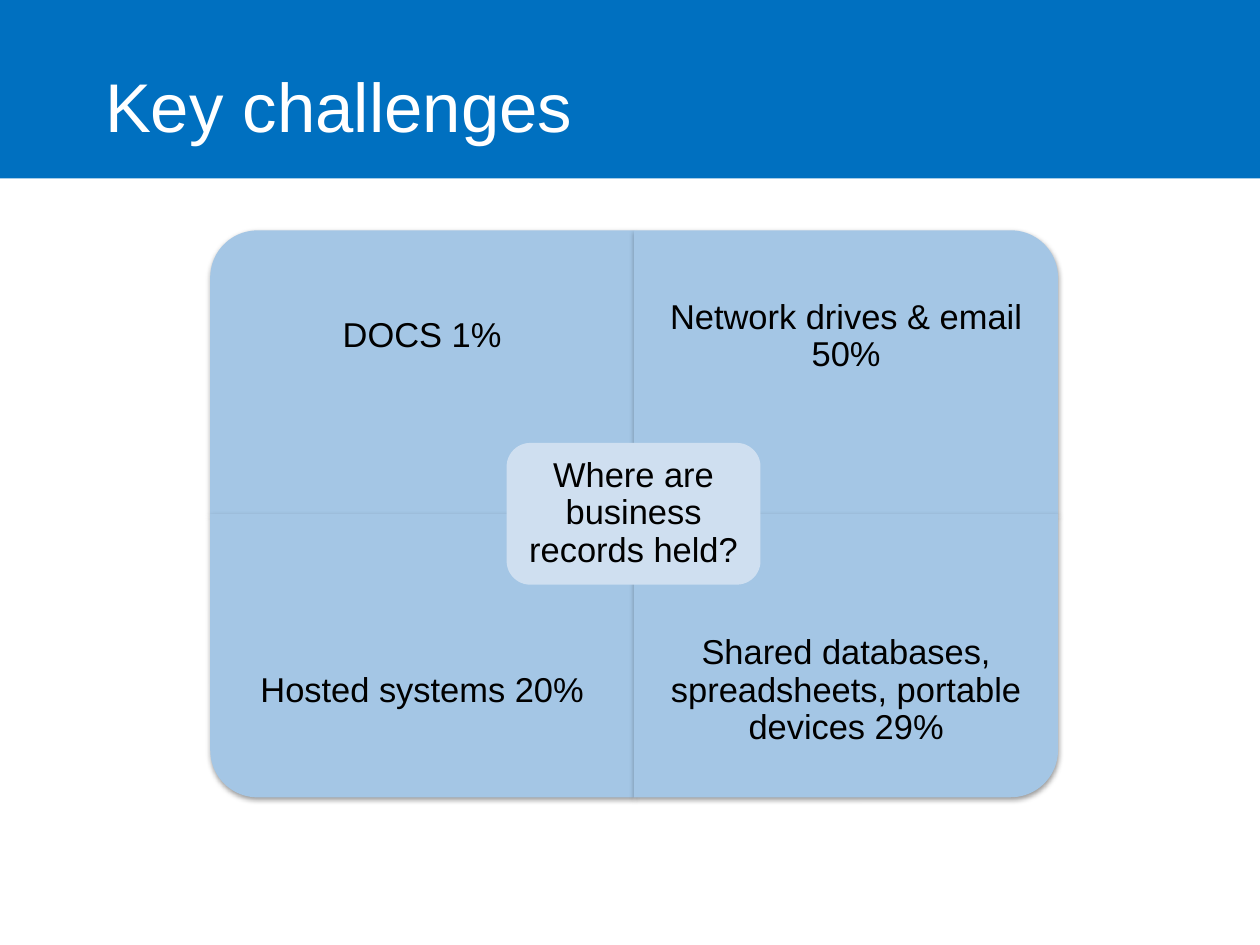
from lxml import etree
from pptx import Presentation
from pptx.dml.color import RGBColor
from pptx.enum.shapes import MSO_SHAPE
from pptx.enum.text import MSO_ANCHOR, PP_ALIGN
from pptx.oxml.ns import qn
from pptx.util import Inches, Pt

RECTANGLE = MSO_SHAPE.RECTANGLE
ROUNDED = MSO_SHAPE.ROUNDED_RECTANGLE
ONE_ROUND_CORNER = MSO_SHAPE.ROUND_1_RECTANGLE
MIDDLE = MSO_ANCHOR.MIDDLE
LEFT, CENTER = PP_ALIGN.LEFT, PP_ALIGN.CENTER

BLUE = RGBColor(0x00, 0x70, 0xC0)
LIGHT_BLUE = RGBColor(0xA4, 0xC6, 0xE5)
PALE_BLUE = RGBColor(0xCF, 0xDF, 0xF0)
WHITE = RGBColor(0xFF, 0xFF, 0xFF)
BLACK = RGBColor(0x00, 0x00, 0x00)

deck = Presentation()
deck.slide_width, deck.slide_height = Inches(10.67), Inches(8)
page = deck.slides.add_slide(deck.slide_layouts[6])


def add_panel(kind, left, top, width, height, fill):
    panel = page.shapes.add_shape(
        kind, Inches(left), Inches(top), Inches(width), Inches(height))
    panel.shadow.inherit = False
    panel.fill.solid()
    panel.fill.fore_color.rgb = fill
    panel.line.fill.background()
    return panel


def write_text(box, text, size=21, color=BLACK, align=CENTER, spacing=0.9,
               margins=(0.16, 0.16, 0.16, 0.16)):
    frame = box.text_frame
    frame.word_wrap = True
    frame.vertical_anchor = MIDDLE
    (frame.margin_left, frame.margin_top,
     frame.margin_right, frame.margin_bottom) = map(Inches, margins)
    para = frame.paragraphs[0]
    para.alignment = align
    para.line_spacing = spacing
    span = para.add_run()
    span.text = text
    span.font.name = "Arial"
    span.font.size = Pt(size)
    span.font.color.rgb = color


# Title band
band = add_panel(RECTANGLE, 0, 0, 10.67, 1.51, BLUE)
write_text(band, "Key challenges", size=42, color=WHITE, align=LEFT,
           spacing=1.0, margins=(0.89, 0.31, 0.79, 0.04))

# Four quadrants, each turned so that its round corner points outwards
GRID_LEFT, GRID_TOP = 1.78, 1.95
CELL_WIDTH, CELL_HEIGHT, LABEL_HEIGHT = 3.59, 2.4, 1.8
quadrants = [
    ("DOCS 1%", 0, 0, 270),
    ("Network drives & email 50%", 0, 1, 0),
    ("Hosted systems 20%", 1, 0, 180),
    ("Shared databases, spreadsheets, portable devices 29%", 1, 1, 90),
]
for text, row, column, angle in quadrants:
    left = GRID_LEFT + column * CELL_WIDTH
    top = GRID_TOP + row * CELL_HEIGHT
    width, height = CELL_WIDTH, CELL_HEIGHT
    if angle in (90, 270):
        width, height = height, width
    quadrant = add_panel(ONE_ROUND_CORNER, left + (CELL_WIDTH - width) / 2,
                         top + (CELL_HEIGHT - height) / 2, width, height, LIGHT_BLUE)
    quadrant.rotation = angle

    # Soft shadow straight below
    effects = quadrant.element.spPr.find(qn("a:effectLst"))
    shadow = etree.SubElement(
        effects, qn("a:outerShdw"), blurRad=str(Pt(3.1)), dist=str(Pt(1.6)),
        dir="5400000", rotWithShape="0")
    shade = etree.SubElement(shadow, qn("a:srgbClr"), val=str(BLACK))
    etree.SubElement(shade, qn("a:alpha"), val="38000")

    # Label on the outer three quarters of the quadrant
    label_top = top + row * (CELL_HEIGHT - LABEL_HEIGHT)
    label = page.shapes.add_textbox(Inches(left), Inches(label_top),
                                    Inches(CELL_WIDTH), Inches(LABEL_HEIGHT))
    write_text(label, text)

# Question in the centre
question = add_panel(ROUNDED, 4.29, 3.75, 2.15, 1.2, PALE_BLUE)
write_text(question, "Where are business records held?",
           margins=(0.09, 0.09, 0.09, 0.09))

deck.save("out.pptx")
